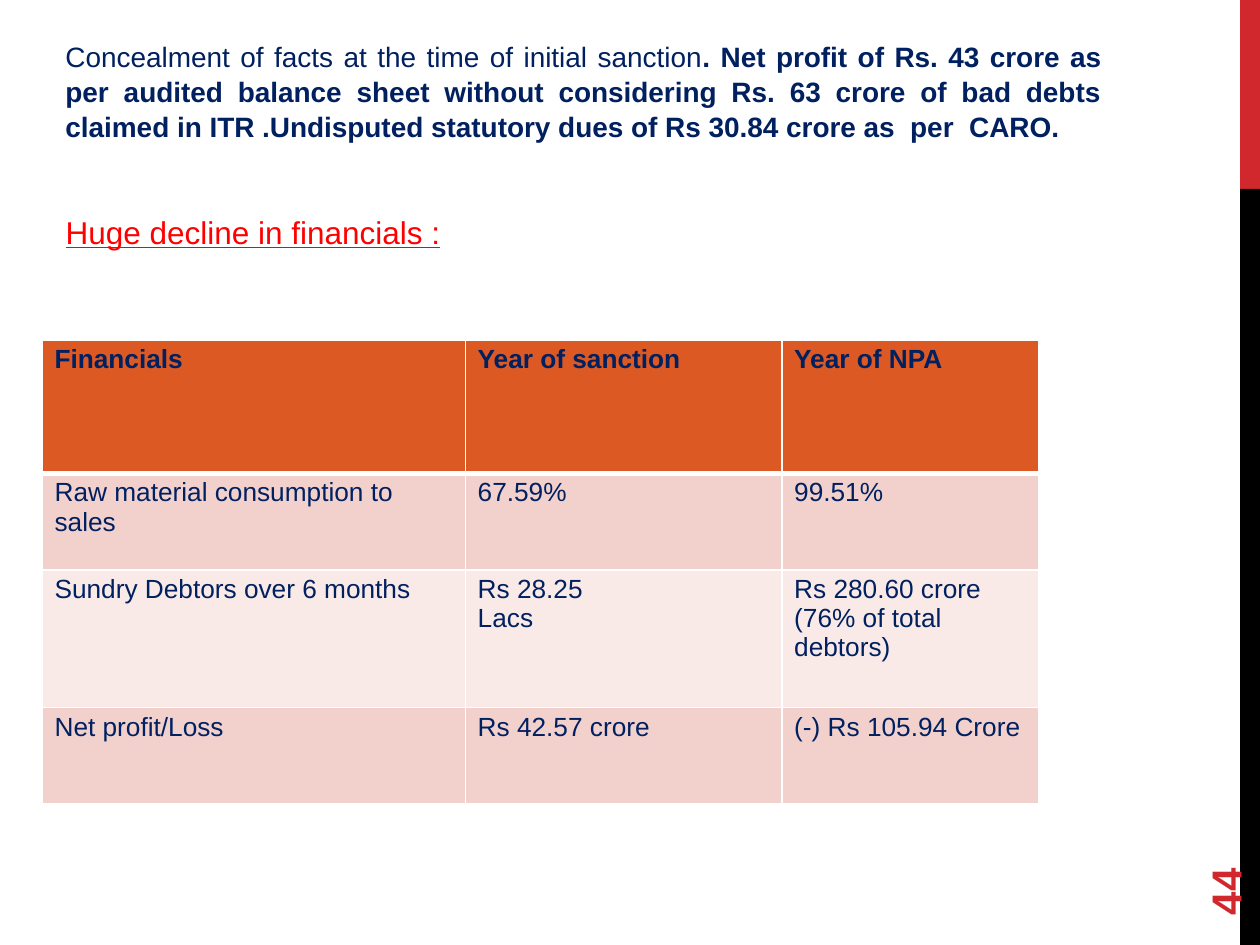
from dataclasses import dataclass

from lxml.etree import SubElement
from pptx import Presentation
from pptx.dml.color import RGBColor
from pptx.enum.shapes import MSO_SHAPE
from pptx.enum.text import MSO_ANCHOR, MSO_AUTO_SIZE, PP_ALIGN
from pptx.oxml.ns import qn
from pptx.util import Cm, Pt


@dataclass(frozen=True)
class Theme:
    font: str = "Arial"
    navy: str = "002060"
    crimson: str = "D1282E"
    red: str = "FF0000"
    black: str = "000000"
    white: str = "FFFFFF"
    header: str = "DC5924"
    bands: tuple = ("F2D1CD", "F9EAE8")
    body_size: int = 16
    heading_size: int = 18
    table_size: int = 15
    number_size: int = 24


THEME = Theme()

FINDING = "Concealment of facts at the time of initial sanction"
EVIDENCE = (
    ". Net profit of Rs. 43 crore as per audited balance sheet without "
    "considering Rs. 63 crore of bad debts claimed in ITR .Undisputed "
    "statutory dues of Rs 30.84 crore as  per  CARO."
)
FINANCIALS = [
    ["Financials", "Year of sanction", "Year of NPA"],
    ["Raw material consumption to sales", "67.59%", "99.51%"],
    ["Sundry Debtors over 6 months", "Rs 28.25\nLacs",
     "Rs 280.60 crore\n(76% of total debtors)"],
    ["Net profit/Loss", "Rs 42.57 crore", "(-) Rs 105.94 Crore"],
]
COLUMN_WIDTHS = [8.53, 6.38, 5.18]
ROW_HEIGHTS = [2.69, 1.95, 2.77, 1.95]


def set_font(paragraph, size, color, bold=None):
    font = paragraph.font
    font.name = THEME.font
    font.size = Pt(size)
    font.color.rgb = RGBColor.from_string(color)
    font.bold = bold


def add_side_bar(slide, top, height, color):
    bar = slide.shapes.add_shape(
        MSO_SHAPE.RECTANGLE, Cm(25), Cm(top), Cm(0.4), Cm(height))
    bar.shadow.inherit = False
    bar.fill.solid()
    bar.fill.fore_color.rgb = RGBColor.from_string(color)
    bar.line.fill.background()


def add_finding(slide):
    finding = slide.shapes.add_textbox(Cm(1.07), Cm(0.64), Cm(21.39), Cm(3))
    finding.text_frame.word_wrap = True
    paragraph = finding.text_frame.paragraphs[0]
    paragraph.alignment = PP_ALIGN.JUSTIFY
    paragraph.line_spacing = 1.05
    set_font(paragraph, THEME.body_size, THEME.navy)
    paragraph.add_run().text = FINDING
    evidence = paragraph.add_run()
    evidence.text = EVIDENCE
    evidence.font.bold = True


def format_heading(slide, text):
    heading = slide.shapes.title
    heading.left, heading.top = Cm(1.07), Cm(4.12)
    heading.width, heading.height = Cm(21.39), Cm(1.1)
    frame = heading.text_frame
    frame.text = text
    frame.auto_size = MSO_AUTO_SIZE.NONE
    frame.vertical_anchor = MSO_ANCHOR.TOP
    paragraph = frame.paragraphs[0]
    paragraph.alignment = PP_ALIGN.JUSTIFY
    paragraph.line_spacing = 1.05
    set_font(paragraph, THEME.heading_size, THEME.red, bold=False)
    paragraph.font.underline = True


def set_borders(cell, widths):
    """Draw white cell edges; widths maps lnL, lnR, lnT, lnB to points."""
    properties = cell._tc.get_or_add_tcPr()
    for edge, width in widths.items():
        line = SubElement(properties, qn(f"a:{edge}"), w=str(Pt(width)))
        fill = SubElement(line, qn("a:solidFill"))
        SubElement(fill, qn("a:srgbClr"), val=THEME.white)


def format_cell(cell, text, row):
    is_header = row == 0
    cell.text = text
    cell.margin_left = cell.margin_right = Cm(0.25)
    cell.margin_top = cell.margin_bottom = Cm(0.1)
    for paragraph in cell.text_frame.paragraphs:
        set_font(paragraph, THEME.table_size, THEME.navy, bold=is_header)
    # The rule under the header is heavier than the rest of the grid
    set_borders(cell, {
        "lnL": 1, "lnR": 1,
        "lnT": 3 if row == 1 else 1,
        "lnB": 3 if is_header else 1,
    })
    color = THEME.header if is_header else THEME.bands[(row - 1) % 2]
    cell.fill.solid()
    cell.fill.fore_color.rgb = RGBColor.from_string(color)


def add_financials(slide):
    table = slide.shapes.add_table(
        len(ROW_HEIGHTS), len(COLUMN_WIDTHS), Cm(0.85), Cm(6.85),
        Cm(sum(COLUMN_WIDTHS)), Cm(sum(ROW_HEIGHTS))).table
    for column, width in zip(table.columns, COLUMN_WIDTHS):
        column.width = Cm(width)
    for row, height in zip(table.rows, ROW_HEIGHTS):
        row.height = Cm(height)
    for r, texts in enumerate(FINANCIALS):
        for c, text in enumerate(texts):
            format_cell(table.cell(r, c), text, r)


def add_page_number(slide, number):
    page = slide.shapes.add_textbox(Cm(22.86), Cm(16.36), Cm(3.66), Cm(1.02))
    page.rotation = 270
    frame = page.text_frame
    frame.word_wrap = True
    frame.vertical_anchor = MSO_ANCHOR.MIDDLE
    frame.text = number
    set_font(frame.paragraphs[0], THEME.number_size, THEME.crimson, bold=True)


def main():
    deck = Presentation()
    deck.slide_width, deck.slide_height = Cm(25.4), Cm(19.05)
    slide = deck.slides.add_slide(deck.slide_layouts.get_by_name("Title Only"))

    # Bars along the right edge
    add_side_bar(slide, 0, 3.81, THEME.crimson)
    add_side_bar(slide, 3.81, 15.24, THEME.black)

    # Finding and heading
    add_finding(slide)
    format_heading(slide, "Huge decline in financials :")

    # Comparison of the two years
    add_financials(slide)
    add_page_number(slide, "44")

    deck.save("out.pptx")


if __name__ == "__main__":
    main()
